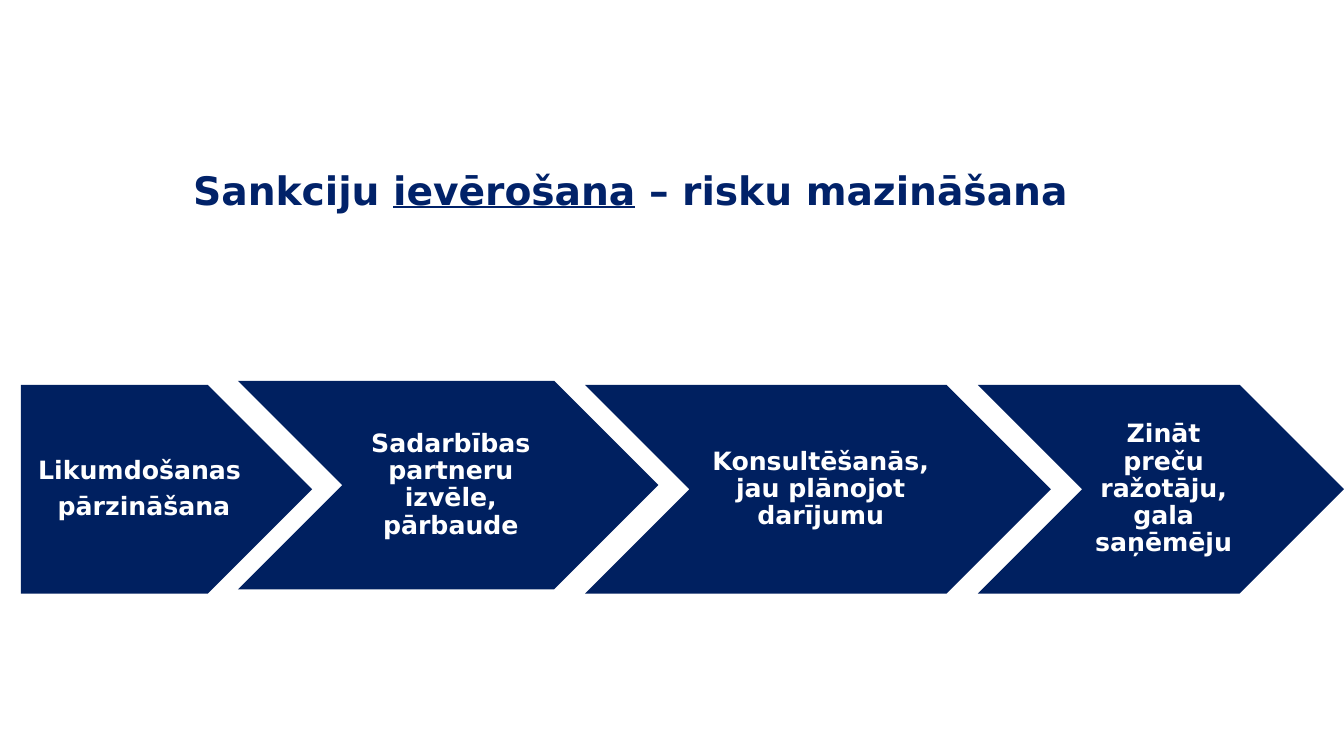
from dataclasses import dataclass

from pptx import Presentation
from pptx import util as u
from pptx.dml.color import RGBColor
from pptx.enum import shapes, text
from pptx.slide import Slide
from pptx.text.text import TextFrame

FONT = "DejaVu Sans"
NAVY = RGBColor(0x00, 0x20, 0x60)
TITLE_BLUE = RGBColor(0x01, 0x22, 0x69)
WHITE = RGBColor(0xFF, 0xFF, 0xFF)

STEP_HEIGHT = 149
STEP_TOP = 275


@dataclass(frozen=True)
class Step:
    left: float
    width: float
    lines: tuple[str, ...]
    top: float = STEP_TOP
    kind: shapes.MSO_SHAPE = shapes.MSO_SHAPE.CHEVRON
    inset: float = 5.8


STEPS = (
    Step(15, 208, ("Likumdošanas ", "pārzināšana"),
         kind=shapes.MSO_SHAPE.PENTAGON, inset=7.2),
    Step(170, 300.3, ("Sadarbības partneru izvēle, pārbaude",), top=272),
    Step(418, 332.7, ("Konsultēšanās, jau plānojot darījumu",)),
    Step(698.5, 261.5, ("Zināt preču ražotāju, gala saņēmēju",)),
)


def add_text(frame: TextFrame, content: str, *, size: float, color: RGBColor,
             underline: bool = False, new_paragraph: bool = False,
             space_after: float = 0) -> None:
    paragraph = frame.add_paragraph() if new_paragraph else frame.paragraphs[-1]
    paragraph.alignment = text.PP_ALIGN.CENTER
    paragraph.line_spacing = 0.9
    paragraph.space_after = u.Pt(space_after)
    run = paragraph.add_run()
    run.text = content
    run.font.name = FONT
    run.font.size = u.Pt(size)
    run.font.bold = True
    run.font.underline = underline
    run.font.color.rgb = color


def add_title(slide: Slide) -> None:
    shape = slide.shapes.add_textbox(u.Pt(61), u.Pt(31.7), u.Pt(778.5), u.Pt(124.6))
    frame = shape.text_frame
    frame.word_wrap = True
    frame.vertical_anchor = text.MSO_ANCHOR.BOTTOM
    for content, underline in (
        ("Sankciju ", False),
        ("ievērošana", True),
        (" – risku mazināšana", False),
    ):
        add_text(frame, content, size=28, color=TITLE_BLUE, underline=underline)


def add_step(slide: Slide, step: Step) -> None:
    shape = slide.shapes.add_shape(step.kind, u.Pt(step.left), u.Pt(step.top),
                                   u.Pt(step.width), u.Pt(STEP_HEIGHT))
    shape.shadow.inherit = False
    shape.fill.solid()
    shape.fill.fore_color.rgb = NAVY
    shape.line.fill.background()
    frame = shape.text_frame
    frame.word_wrap = True
    frame.vertical_anchor = text.MSO_ANCHOR.MIDDLE
    frame.margin_left = u.Pt(step.inset)
    frame.margin_right = u.Pt(2)
    frame.margin_top = frame.margin_bottom = u.Pt(3.6)
    for index, line in enumerate(step.lines):
        add_text(frame, line, size=18, color=WHITE,
                 new_paragraph=index > 0, space_after=6.3)


def main() -> None:
    presentation = Presentation()
    presentation.slide_width = u.Pt(960)
    presentation.slide_height = u.Pt(540)
    slide = presentation.slides.add_slide(presentation.slide_layouts[6])
    add_title(slide)
    for step in STEPS:
        add_step(slide, step)
    presentation.save("out.pptx")


if __name__ == "__main__":
    main()
